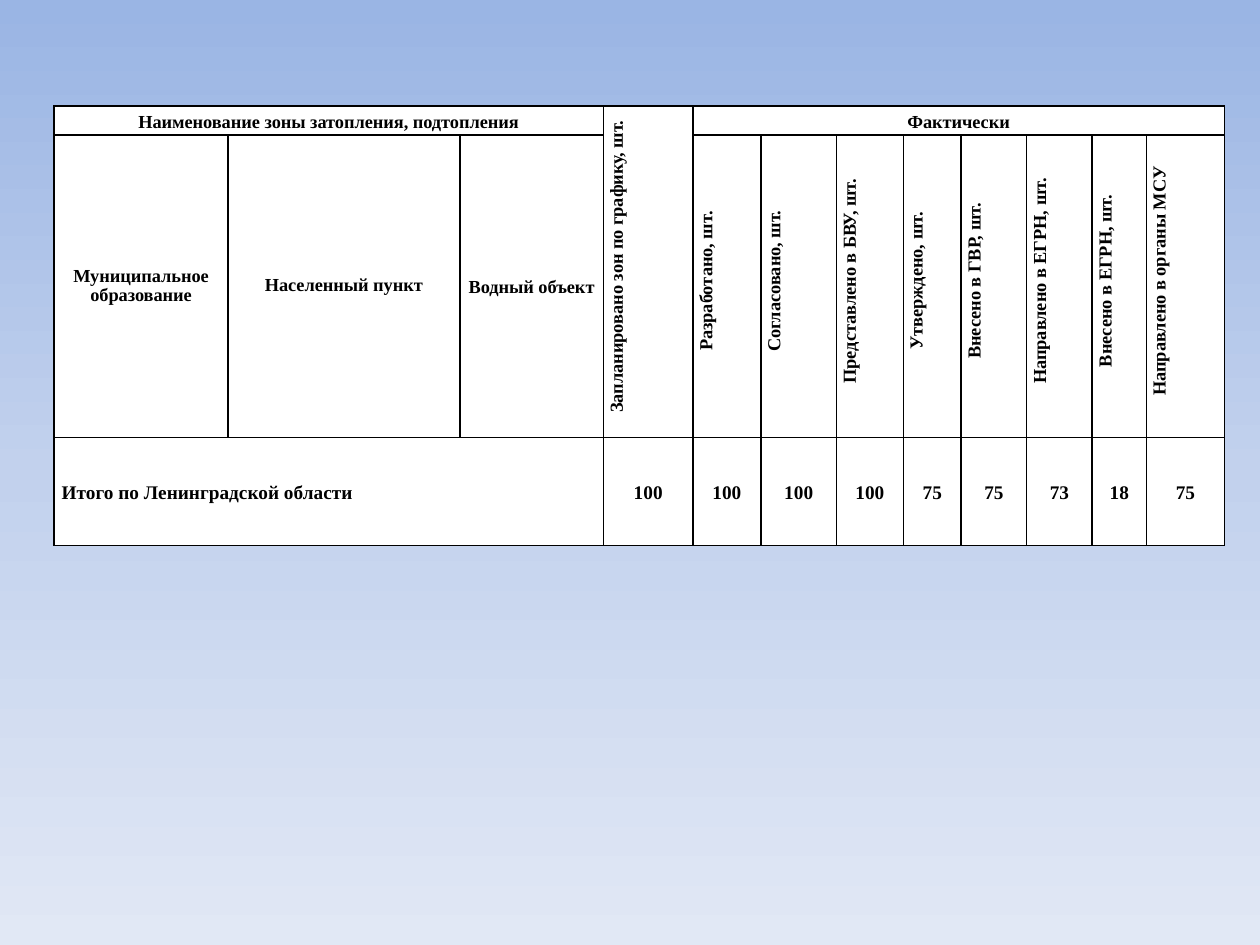
from dataclasses import dataclass
from copy import deepcopy
from pptx import Presentation
from pptx.dml.color import RGBColor
from pptx.enum.text import MSO_ANCHOR, PP_ALIGN
from pptx.oxml import parse_xml
from pptx.oxml.ns import nsdecls, qn
from pptx.slide import Slide
from pptx.table import Table
from pptx.util import Inches, Pt


@dataclass(frozen=True)
class Theme:
    font: str = "Times New Roman"
    ink: str = "000000"
    paper: str = "FFFFFF"
    sky: tuple = ((0, "9AB5E4"), (0.5, "C2D1ED"), (1, "E1E8F5"))
    head: float = 10.5
    body: float = 11
    rule: float = 1


@dataclass(frozen=True)
class Entry:
    row: int
    col: int
    text: str
    rows: int = 1
    cols: int = 1
    size: float = Theme.head
    lead: float = 1.15
    align: PP_ALIGN = PP_ALIGN.CENTER
    turned: bool = False


THEME = Theme()
WIDTHS = (1.38, 1.84, 1.14, 0.71, 0.54, 0.6, 0.53, 0.46, 0.52, 0.52, 0.43, 0.62)
HEIGHTS = (0.23, 1.42, 0.86)
STAGES = ("Разработано, шт.", "Согласовано, шт.", "Представлено в БВУ, шт.",
          "Утверждено, шт.", "Внесено в ГВР, шт.", "Направлено в ЕГРН, шт.",
          "Внесено в ЕГРН, шт.", "Направлено в органы МСУ")
TOTALS = (100, 100, 100, 100, 75, 75, 73, 18, 75)

ENTRIES = [
    # Group headings
    Entry(0, 0, "Наименование зоны затопления, подтопления", cols=3),
    Entry(0, 3, "Запланировано зон по графику, шт.", rows=2, turned=True),
    Entry(0, 4, "Фактически", cols=8),
    # Column headings
    Entry(1, 0, "Муниципальное образование", lead=0.92),
    Entry(1, 1, "Населенный пункт", lead=0.92),
    Entry(1, 2, "Водный объект"),
    *(Entry(1, col, name, turned=True) for col, name in enumerate(STAGES, 4)),
    # Totals
    Entry(2, 0, "Итого по Ленинградской области", cols=3,
          size=THEME.body, align=PP_ALIGN.LEFT),
    *(Entry(2, col, str(num), size=THEME.body) for col, num in enumerate(TOTALS, 3)),
]


def assign(item: object, values: dict) -> None:
    for name, value in values.items():
        setattr(item, name, value)


def paint(slide: Slide) -> None:
    fill = slide.background.fill
    fill.gradient()
    fill.gradient_angle = 270
    stops = next(slide.element.iter(qn("a:gsLst")))
    stops.append(deepcopy(stops[-1]))
    for stop, (place, tone) in zip(fill.gradient_stops, THEME.sky):
        stop.position = place
        stop.color.rgb = RGBColor.from_string(tone)


def frame(table: Table) -> None:
    for cell in table.iter_cells():
        props = cell._tc.get_or_add_tcPr()
        for side in "LRTB":
            props.append(parse_xml(
                f'<a:ln{side} {nsdecls("a")} w="{Pt(THEME.rule)}"><a:solidFill>'
                f'<a:srgbClr val="{THEME.ink}"/></a:solidFill></a:ln{side}>'))
        cell.fill.solid()
        cell.fill.fore_color.rgb = RGBColor.from_string(THEME.paper)
        assign(cell, {"margin_left": Inches(0.06), "margin_right": Inches(0.06),
                      "margin_top": 0, "margin_bottom": 0,
                      "vertical_anchor": MSO_ANCHOR.MIDDLE})


def write(table: Table, entry: Entry) -> None:
    cell = table.cell(entry.row, entry.col)
    if entry.rows * entry.cols > 1:
        cell.merge(table.cell(entry.row + entry.rows - 1, entry.col + entry.cols - 1))
    para = cell.text_frame.paragraphs[0]
    assign(para, {"alignment": entry.align, "line_spacing": entry.lead})
    if entry.turned:
        cell._tc.get_or_add_tcPr().set("vert", "vert270")
        para._p.get_or_add_pPr().set("marL", str(Inches(0.08)))
    run = para.add_run()
    run.text = entry.text
    assign(run.font, {"name": THEME.font, "size": Pt(entry.size), "bold": True})
    run.font.color.rgb = RGBColor.from_string(THEME.ink)


def main() -> None:
    deck = Presentation()
    assign(deck, {"slide_width": Inches(10), "slide_height": Inches(7.5)})
    slide = deck.slides.add_slide(deck.slide_layouts[6])
    paint(slide)

    # Table grid
    table = slide.shapes.add_table(
        len(HEIGHTS), len(WIDTHS), Inches(0.43), Inches(0.84),
        Inches(sum(WIDTHS)), Inches(sum(HEIGHTS))).table
    assign(table, {"first_row": False, "horz_banding": False})
    for col, width in zip(table.columns, WIDTHS):
        col.width = Inches(width)
    for row, height in zip(table.rows, HEIGHTS):
        row.height = Inches(height)

    # Table content
    frame(table)
    for entry in ENTRIES:
        write(table, entry)
    deck.save("out.pptx")


if __name__ == "__main__":
    main()
